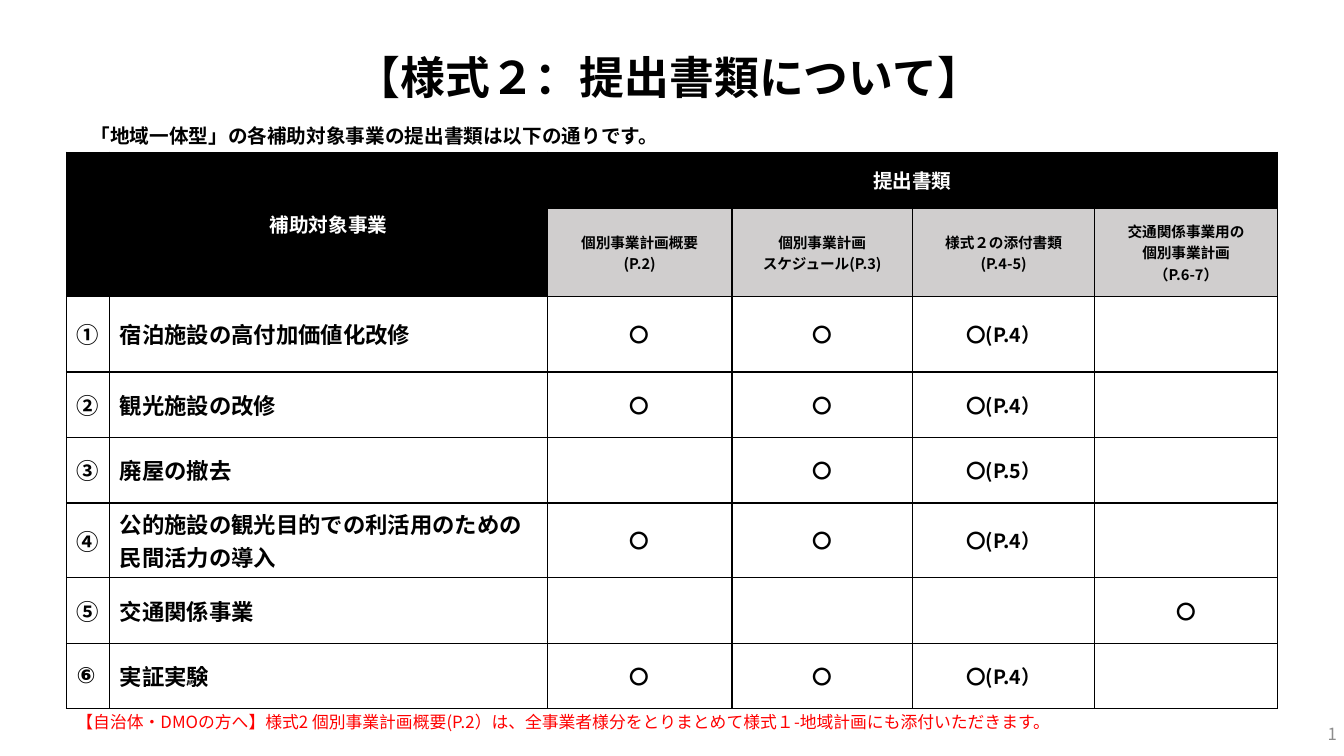
from lxml.etree import SubElement
from pptx import Presentation
from pptx.dml.color import RGBColor
from pptx.enum.text import MSO_ANCHOR, MSO_AUTO_SIZE, PP_ALIGN
from pptx.oxml.ns import qn
from pptx.util import Emu, Pt

FONT = "Noto Sans CJK JP"
BLACK, WHITE, GRAY = "000000", "FFFFFF", "D0CECE"
COLUMN_WIDTHS = [43, 434, 183, 179, 181, 181]
ROW_HEIGHTS = [56, 79, 75, 65, 65, 69, 65, 65]
DOCUMENTS = [
    "個別事業計画概要\n(P.2)",
    "個別事業計画\nスケジュール(P.3)",
    "様式２の添付書類\n(P.4-5)",
    "交通関係事業用の\n個別事業計画\n（P.6-7）",
]
PROJECTS = [
    ("①", "宿泊施設の高付加価値化改修", "〇", "〇", "〇(P.4）", ""),
    ("②", "観光施設の改修", "〇", "〇", "〇(P.4）", ""),
    ("③", "廃屋の撤去", "", "〇", "〇(P.5）", ""),
    ("④", "公的施設の観光目的での利活用のための\n民間活力の導入", "〇", "〇", "〇(P.4）", ""),
    ("⑤", "交通関係事業", "", "", "", "〇"),
    ("⑥", "実証実験", "〇", "〇", "〇(P.4）", ""),
]


def px(value):
    return Emu(value * 9144)


def rgb(value):
    return RGBColor.from_string(value)


def write_text(frame, text, size=14, color=BLACK, bold=True, align=PP_ALIGN.LEFT, font=FONT):
    frame.word_wrap = True
    for index, line in enumerate(text.split("\n")):
        paragraph = frame.paragraphs[0] if index == 0 else frame.add_paragraph()
        paragraph.alignment = align
        run = paragraph.add_run()
        run.text = line
        run.font.size = Pt(size)
        run.font.bold = bold
        run.font.color.rgb = rgb(color)
        run.font.name = font
        SubElement(run.font._element, qn("a:ea"), typeface=font)


def place_text(shape, box, text, **text_format):
    shape.left, shape.top, shape.width, shape.height = map(px, box)
    frame = shape.text_frame
    frame.auto_size = MSO_AUTO_SIZE.NONE
    frame.vertical_anchor = MSO_ANCHOR.MIDDLE
    write_text(frame, text, **text_format)


def add_text(slide, box, text, **text_format):
    place_text(slide.shapes.add_textbox(*map(px, box)), box, text, **text_format)


def style_cell(cell, fill):
    properties = cell._tc.get_or_add_tcPr()
    for side in ("lnL", "lnR", "lnT", "lnB"):
        line = SubElement(properties, qn(f"a:{side}"), w=str(Pt(1)))
        solid = SubElement(line, qn("a:solidFill"))
        SubElement(solid, qn("a:srgbClr"), val=BLACK)
    cell.fill.solid()
    cell.fill.fore_color.rgb = rgb(fill)
    cell.vertical_anchor = MSO_ANCHOR.MIDDLE


def write_cell(cell, text, padding=5, **text_format):
    cell.margin_left = cell.margin_right = px(10)
    cell.margin_top = cell.margin_bottom = px(padding)
    if text:
        write_text(cell.text_frame, text, **text_format)


def cell_fill(row, column):
    if row > 1:
        return WHITE
    return GRAY if row == 1 and column > 1 else BLACK


def add_document_table(slide):
    rows, columns = len(ROW_HEIGHTS), len(COLUMN_WIDTHS)
    table = slide.shapes.add_table(
        rows, columns, px(66), px(151), px(sum(COLUMN_WIDTHS)), px(sum(ROW_HEIGHTS))
    ).table
    table.first_row = table.horz_banding = False
    for column, width in zip(table.columns, COLUMN_WIDTHS):
        column.width = px(width)
    for row, height in zip(table.rows, ROW_HEIGHTS):
        row.height = px(height)
    for row in range(rows):
        for column in range(columns):
            style_cell(table.cell(row, column), cell_fill(row, column))

    center = PP_ALIGN.CENTER
    for column in (0, 1):
        table.cell(0, column).merge(table.cell(1, column))
    table.cell(0, 2).merge(table.cell(0, 5))
    write_cell(table.cell(0, 1), "補助対象事業", color=WHITE, align=center)
    write_cell(table.cell(0, 2), "提出書類", color=WHITE, align=center)
    for column, document in enumerate(DOCUMENTS, 2):
        write_cell(table.cell(1, column), document, padding=12, size=10.5, align=center)
    for row, (number, project, *marks) in enumerate(PROJECTS, 2):
        number_font = "Arial" if number == "⑥" else FONT
        write_cell(table.cell(row, 0), number, size=16, font=number_font)
        write_cell(table.cell(row, 1), project, size=16)
        for column, mark in enumerate(marks, 2):
            write_cell(table.cell(row, column), mark, padding=12, align=center)


def main():
    presentation = Presentation()
    presentation.slide_width, presentation.slide_height = px(1333), px(750)
    slide = presentation.slides.add_slide(presentation.slide_layouts[5])
    place_text(slide.shapes.title, (17, 44, 1293, 64), "【様式２：提出書類について】",
               size=32, align=PP_ALIGN.CENTER)
    add_text(slide, (80, 118, 667, 34),
             "「地域一体型」の各補助対象事業の提出書類は以下の通りです。")
    add_document_table(slide)
    add_text(slide, (66, 701, 1201, 30),
             "【自治体・DMOの方へ】様式2 個別事業計画概要(P.2）は、全事業者様分をとりまとめて様式１-地域計画にも添付いただきます。",
             size=12, color="FF0000", bold=False)
    add_text(slide, (1036, 708, 300, 40), "1", size=12, color="8C8C8C", bold=False,
             align=PP_ALIGN.RIGHT)
    presentation.save("out.pptx")


if __name__ == "__main__":
    main()
